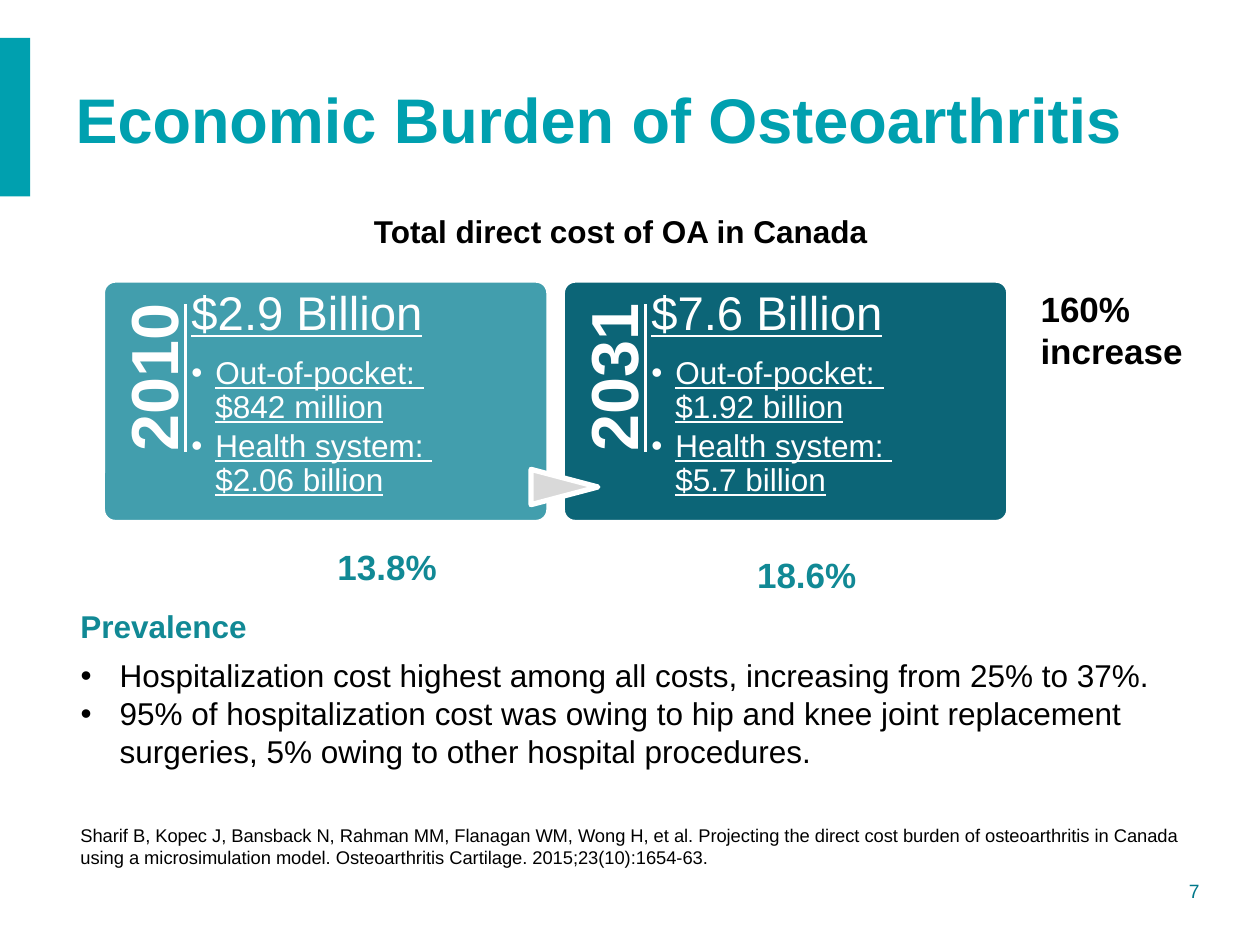
from pptx import Presentation
from pptx.dml.color import RGBColor
from pptx.enum import shapes, text
from pptx.oxml.ns import qn
from pptx.util import Inches, Pt
from lxml import etree

TEAL = RGBColor(0x00, 0xA0, 0xAF)
LIGHT_TEAL = RGBColor(0x42, 0x9E, 0xAD)
DARK_TEAL = RGBColor(0x0C, 0x65, 0x77)
LABEL_TEAL = RGBColor(0x11, 0x89, 0x95)
NUMBER_TEAL = RGBColor(0x00, 0x78, 0x8A)
GREY = RGBColor(0xD9, 0xD9, 0xD9)
WHITE = RGBColor(0xFF, 0xFF, 0xFF)
BLACK = RGBColor(0x00, 0x00, 0x00)

# Content
TITLE = "Economic Burden of Osteoarthritis"
CARDS = [
    ("2010", "$2.9 Billion", LIGHT_TEAL,
     ["Out-of-pocket: \v$842 million", "Health system: \v$2.06 billion"]),
    ("2031", "$7.6 Billion", DARK_TEAL,
     ["Out-of-pocket: \v$1.92 billion", "Health system: \v$5.7 billion"]),
]
FINDINGS = [
    "Hospitalization cost highest among all costs, increasing from 25% to 37%.",
    "95% of hospitalization cost was owing to hip and knee joint replacement "
    "surgeries, 5% owing to other hospital procedures.",
]
CITATION = ("Sharif B, Kopec J, Bansback N, Rahman MM, Flanagan WM, Wong H, et al. "
            "Projecting the direct cost burden of osteoarthritis in Canada using a "
            "microsimulation model. Osteoarthritis Cartilage. 2015;23(10):1654-63.")
# Text, place, size, colour, bold
LABELS = [
    ("Total direct cost of OA in Canada", (2.87, 1.63, 4.33, 0.4), 18, BLACK, True),
    ("Prevalence", (0.54, 4.77, 1.9, 0.4), 18, LABEL_TEAL, True),
    ("18.6%", (5.91, 4.34, 1.48, 0.44), 20, LABEL_TEAL, True),
    ("13.8%", (2.58, 4.28, 1.36, 0.44), 20, LABEL_TEAL, True),
    ("160% increase", (8.16, 2.23, 1.35, 0.77), 20, BLACK, True),
    (CITATION, (0.54, 6.49, 9, 0.47), 10.5, BLACK, False),
]

# Card grid
CARD_LEFT, CARD_TOP, CARD_WIDTH, CARD_HEIGHT = 0.82, 2.23, 3.53, 1.91
CARD_STEP = 3.65


def inches(*lengths):
    return [Inches(length) for length in lengths]


def style(para, size, color, bold=False, underline=None):
    font = para.font
    font.name, font.size, font.bold = "Arial", Pt(size), bold
    font.color.rgb, font.underline = color, underline


def set_bullet(para, indent):
    props = para._p.get_or_add_pPr()
    props.set("marL", str(Inches(indent)))
    props.set("indent", str(-Inches(indent)))
    etree.SubElement(props, qn("a:buFont")).set("typeface", "Arial")
    etree.SubElement(props, qn("a:buChar")).set("char", "•")
    # Character defaults come after the bullet in the schema
    defaults = props.find(qn("a:defRPr"))
    if defaults is not None:
        props.append(defaults)


def add_text(place, insets=(0.1, 0.05, 0.1, 0.05)):
    box = page.shapes.add_textbox(*inches(*place))
    frame = box.text_frame
    frame.word_wrap = True
    (frame.margin_left, frame.margin_top,
     frame.margin_right, frame.margin_bottom) = inches(*insets)
    return box


def add_block(kind, place, fill, line_width=None):
    block = page.shapes.add_shape(kind, *inches(*place))
    block.shadow.inherit = False
    block.fill.solid()
    block.fill.fore_color.rgb = fill
    if line_width:
        block.line.color.rgb = WHITE
        block.line.width = Pt(line_width)
    else:
        block.line.fill.background()
    return block


def add_card(left, year, total, fill, costs):
    card = add_block(shapes.MSO_SHAPE.ROUNDED_RECTANGLE,
                     (left, CARD_TOP, CARD_WIDTH, CARD_HEIGHT), fill, 2)
    card.adjustments[0] = 0.05

    year_box = add_text((left - 0.43, 2.66, 1.57, 0.71), (0, 0.14, 0.18, 0))
    year_box.rotation = 270
    para = year_box.text_frame.paragraphs[0]
    para.text, para.alignment, para.line_spacing = year, text.PP_ALIGN.RIGHT, 0.9
    style(para, 38, WHITE, True, True)

    frame = add_text((left + 0.7, CARD_TOP, 2.63, CARD_HEIGHT),
                     (0, 0.07, 0, 0)).text_frame
    para = frame.paragraphs[0]
    para.text, para.line_spacing, para.space_after = total, 0.9, Pt(9.5)
    style(para, 27, WHITE, underline=True)
    for cost in costs:
        para = frame.add_paragraph()
        para.text, para.level = cost, 1
        para.line_spacing, para.space_after = 0.9, Pt(2.7)
        style(para, 18, WHITE, underline=True)
        set_bullet(para, 0.19)


deck = Presentation()
deck.slide_width, deck.slide_height = inches(10, 7.5)
page = deck.slides.add_slide(deck.slide_layouts[1])
title, body = page.placeholders

# Title and side bar
add_block(shapes.MSO_SHAPE.RECTANGLE, (0, 0.3, 0.24, 1.26), TEAL)
title.left, title.top, title.width, title.height = inches(0.5, 0.3, 9.02, 1.28)
title.text_frame.text = TITLE
title.text_frame.vertical_anchor = text.MSO_ANCHOR.MIDDLE
title.text_frame.auto_size = text.MSO_AUTO_SIZE.NONE
heading = title.text_frame.paragraphs[0]
heading.alignment = text.PP_ALIGN.LEFT
style(heading, 36, TEAL, True)

# Cost cards with the arrow between them
for index, (year, total, fill, costs) in enumerate(CARDS):
    add_card(CARD_LEFT + index * CARD_STEP, year, total, fill, costs)
arrow = add_block(shapes.MSO_SHAPE.FLOWCHART_EXTRACT, (4.34, 3.6, 0.28, 0.53), GREY, 3)
arrow.rotation = 90

# Labels and citation
for words, place, size, color, bold in LABELS:
    para = add_text(place).text_frame.paragraphs[0]
    para.text = words
    style(para, size, color, bold)

# Findings
body.left, body.top, body.width, body.height = inches(0.54, 5.16, 8.98, 1.28)
body.text_frame.text = "\n".join(FINDINGS)
body.text_frame.auto_size = text.MSO_AUTO_SIZE.NONE
for para in body.text_frame.paragraphs:
    para.space_before = Pt(0)
    style(para, 18, BLACK)
    set_bullet(para, 0.31)

# Page number
para = add_text((8.45, 6.93, 1.17, 0.29)).text_frame.paragraphs[0]
para.text, para.alignment = "7", text.PP_ALIGN.RIGHT
style(para, 11, NUMBER_TEAL)

deck.save("out.pptx")
